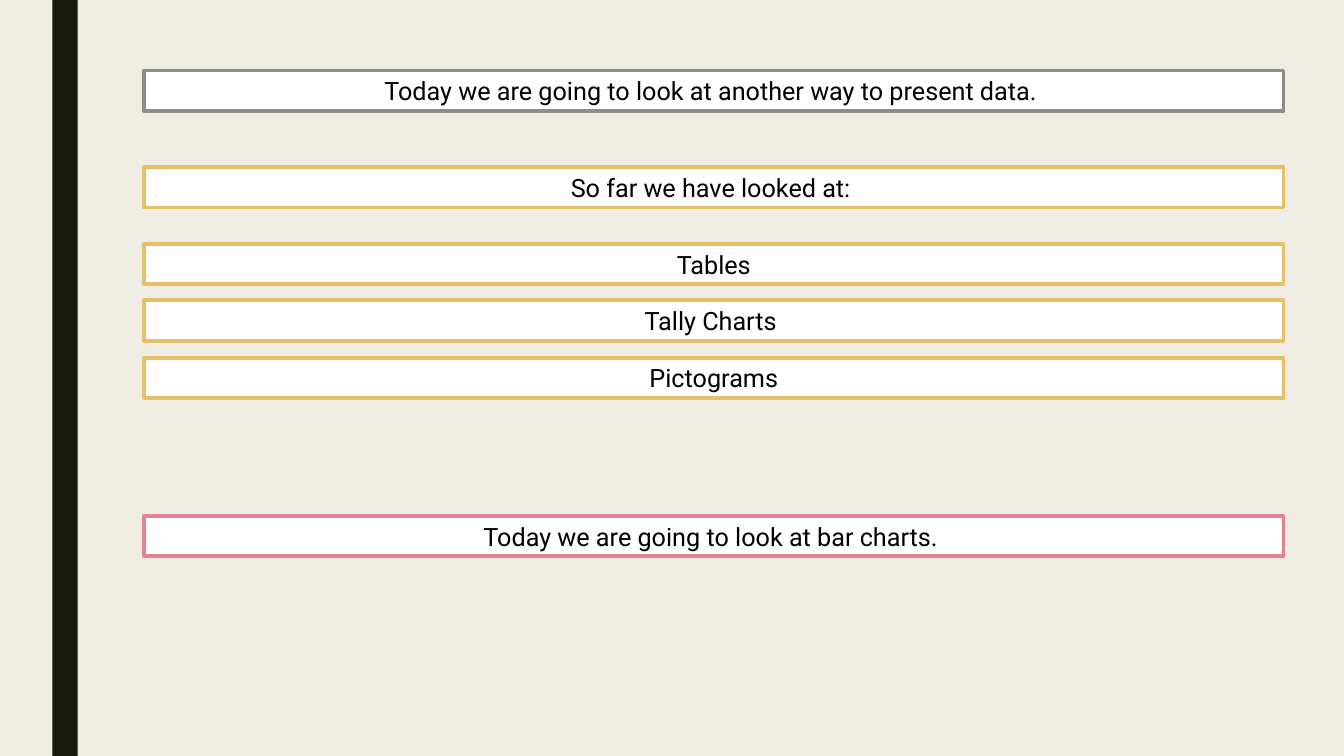
"""Build a slide that recaps ways to present data and introduces bar charts."""
from pptx import Presentation
from pptx.dml.color import RGBColor
from pptx.enum.shapes import MSO_SHAPE
from pptx.enum.text import MSO_ANCHOR, MSO_AUTO_SIZE, PP_ALIGN
from pptx.util import Inches, Pt

RECT = MSO_SHAPE.RECTANGLE
CENTER = PP_ALIGN.CENTER
TOP = MSO_ANCHOR.TOP
GROW = MSO_AUTO_SIZE.SHAPE_TO_FIT_TEXT
GREY, GOLD, PINK = "8C8D86", "E6C069", "E28394"


def color(value):
    return RGBColor.from_string(value)


def add_rect(left, top, width, height, fill):
    s = slide.shapes.add_shape(RECT, Inches(left), Inches(top), Inches(width), Inches(height))
    s.shadow.inherit = False
    s.fill.solid()
    s.fill.fore_color.rgb = color(fill)
    return s


prs = Presentation()
prs.slide_width = Inches(13.33)
prs.slide_height = Inches(7.5)
slide = prs.slides.add_slide(prs.slide_layouts[6])
slide.background.fill.solid()
slide.background.fill.fore_color.rgb = color("EFEDE3")

side_bar = add_rect(0.52, 0, 0.25, 7.5, "191B0E")
side_bar.line.fill.background()

statements = [
    (0.7, GREY, "Today we are going to look at another way to present data. "),
    (1.66, GOLD, "So far we have looked at: "),
    (2.42, GOLD, "Tables"),
    (2.98, GOLD, "Tally Charts "),
    (3.55, GOLD, "Pictograms"),
    (5.12, PINK, "Today we are going to look at bar charts. "),
]
for top, border, text in statements:
    s = add_rect(1.43, top, 11.3, 0.4, "FFFFFF")
    s.line.color.rgb = color(border)
    s.line.width = Pt(2.75)
    tf = s.text_frame
    tf.word_wrap = True
    tf.auto_size = GROW
    tf.vertical_anchor = TOP
    p = tf.paragraphs[0]
    p.text = text
    p.alignment = CENTER
    p.font.name = "Roboto"
    p.font.size = Pt(18)
    p.font.color.rgb = color("000000")

prs.save("out.pptx")
